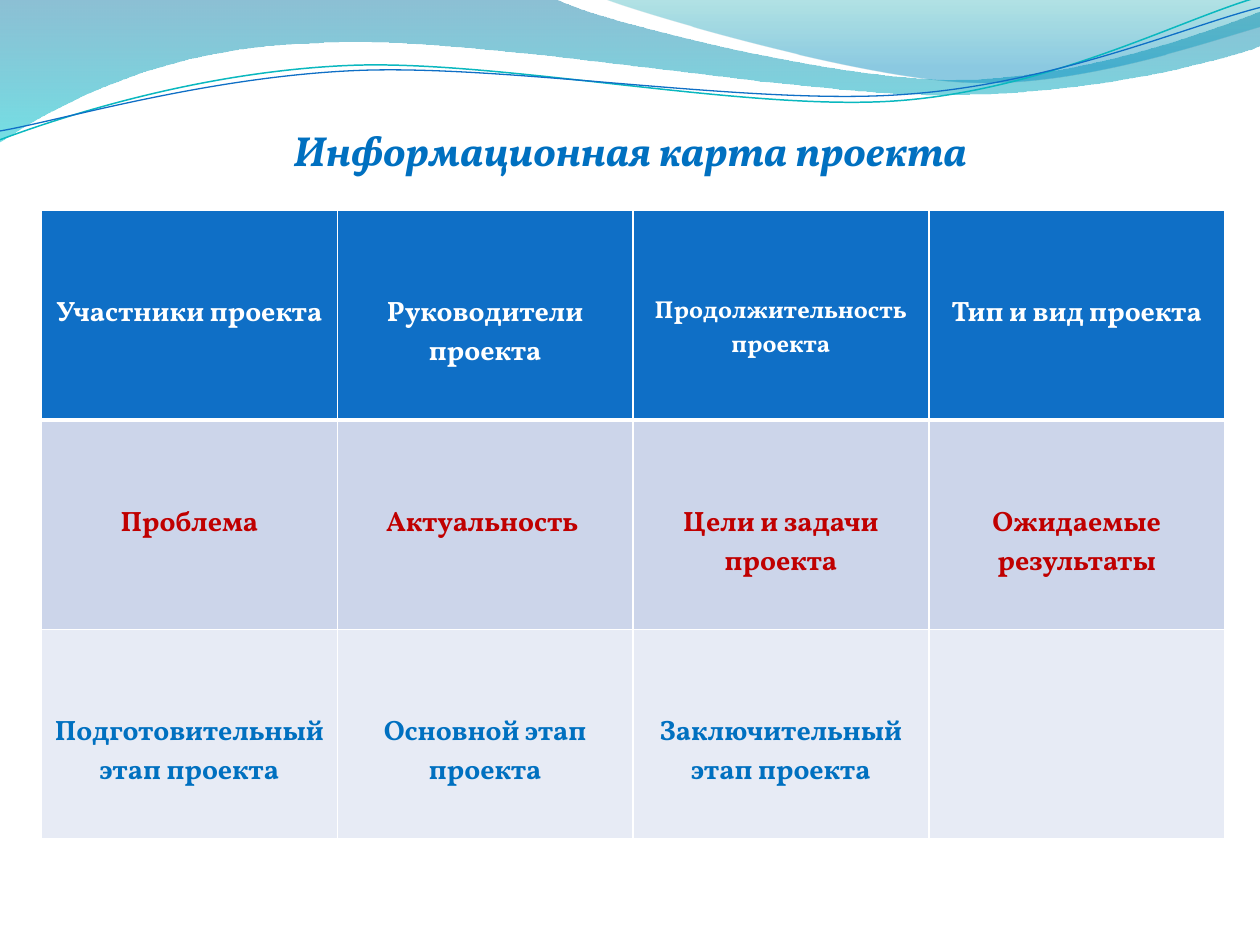
import math

import lxml.etree
import pptx
import pptx.dml.color
import pptx.enum.text
import pptx.oxml.ns
import pptx.util

Inches = pptx.util.Inches
Pt = pptx.util.Pt
qn = pptx.oxml.ns.qn
FONT = "Vollkorn"
HUES = {
    "white": "FFFFFF", "blue": "0070C0", "red": "C00000",
    "head": "0F6FC6", "odd": "CCD5EA", "even": "E7EBF5",
    "deep": "0074A1", "aqua": "00C6CF", "teal": "00A1A9",
    "sky": "008BBF", "cyan": "0AB8BF",
}
WAVES = [
    ([(0, 0), (4.4, -0.01), (4.76, 0.17, 6.64, 0.63, 7.58, 0.63),
      (8.53, 0.63, 9.58, 0.26, 10, 0.09), (10.01, 0.36),
      (9.83, 0.44, 8.7, 0.76, 7.46, 0.75), (6.22, 0.75, 3.82, 0.28, 2.57, 0.34),
      (1.29, 0.36, 0.46, 0.83, -0.01, 1.13), (0, 0)],
     [(0, "deep", 45), (1, "aqua", 55)]),
    ([(4.79, -0.01), (5.09, 0.11, 6.82, 0.62, 7.69, 0.65),
      (8.56, 0.69, 9.61, 0.32, 10, 0.21), (10, 0), (4.79, -0.01)],
     [(0, "teal", 30), (0.8, "sky", 45)]),
]
TILT = 2.7
LINES = [
    ([(0, 1.11), (0.48, 0.93, 1.58, 0.57, 2.77, 0.52),
      (3.95, 0.47, 5.93, 0.89, 7.13, 0.8), (8.33, 0.71, 9.38, 0.15, 9.98, -0.02)],
     "cyan", 0.85),
    ([(0, 1.04), (0.47, 0.96, 1.64, 0.61, 2.83, 0.56),
      (4.03, 0.51, 5.97, 0.84, 7.17, 0.75), (8.36, 0.67, 9.41, 0.21, 10, 0.06)],
     "head", 0.75),
]
ROWS = [
    ("head", "white", ["Участники проекта", "Руководители проекта",
                       "Продолжительность проекта", "Тип и вид проекта"]),
    ("odd", "red", ["Проблема", "Актуальность ",
                    "Цели и задачи проекта", "Ожидаемые результаты"]),
    ("even", "blue", ["Подготовительный этап проекта", "Основной этап проекта",
                      "Заключительный этап проекта", ""]),
]


def get_hue(name):
    """Return the named colour."""
    return pptx.dml.color.RGBColor.from_string(HUES[name])


def place_dots(box, path, tilt):
    """Return each part of a path as slide points, turned about the box centre."""
    mid_x, mid_y = box[2] / 2, box[3] / 2
    cos, sin = math.cos(math.radians(tilt)), math.sin(math.radians(tilt))
    parts = []
    for part in path:
        pairs = [(x - mid_x, y - mid_y) for x, y in zip(part[::2], part[1::2])]
        parts.append([(Inches(box[0] + mid_x + x * cos - y * sin),
                       Inches(box[1] + mid_y + x * sin + y * cos))
                      for x, y in pairs])
    return parts


def add_path(slide, box, path, close, tilt=0):
    """Add a freeform of lines and cubic curves."""
    parts = place_dots(box, path, tilt)
    form = slide.shapes.build_freeform(*parts[0][0], scale=1.0)
    form.add_line_segments([part[-1] for part in parts[1:]], close=close)
    shape = form.convert_to_shape()
    shape.shadow.inherit = False
    steps = list(shape._element.iter(qn("a:lnTo")))
    for step, part in zip(steps, parts[1:]):
        if len(part) == 3:
            step.tag = qn("a:cubicBezTo")
            step.clear()
            for x, y in part:
                lxml.etree.SubElement(step, qn("a:pt"), x=str(x - shape.left),
                                      y=str(y - shape.top))
    shape.rotation = -tilt
    return shape


def add_waves(slide, box):
    """Draw the tinted waves and the thin lines over them."""
    for path, stops in WAVES:
        wave = add_path(slide, box, path, True)
        wave.line.fill.background()
        wave.fill.gradient()
        wave.fill.gradient_angle = 270
        for stop, (place, hue, alpha) in zip(wave.fill.gradient_stops, stops):
            stop.position = place
            stop.color.rgb = get_hue(hue)
        tints = wave._element.spPr.iter(qn("a:srgbClr"))
        for tint, (place, hue, alpha) in zip(tints, stops):
            lxml.etree.SubElement(tint, qn("a:alpha"), val=str(alpha * 1000))
    for path, hue, width in LINES:
        curve = add_path(slide, box, path, False, TILT)
        curve.fill.background()
        curve.line.color.rgb = get_hue(hue)
        curve.line.width = Pt(width)


def set_text(para, text, size, hue):
    """Write a centred bold paragraph."""
    para.text = text
    para.alignment = pptx.enum.text.PP_ALIGN.CENTER
    para.font.name = FONT
    para.font.size = Pt(size)
    para.font.bold = True
    para.font.color.rgb = get_hue(hue)


def add_title(slide, box):
    """Add the heading at the foot of its box."""
    frame = slide.shapes.add_textbox(*map(Inches, box)).text_frame
    frame.word_wrap = True
    frame.vertical_anchor = pptx.enum.text.MSO_ANCHOR.BOTTOM
    frame.margin_left = frame.margin_right = frame.margin_bottom = 0
    set_text(frame.paragraphs[0], "Информационная карта проекта", 24, "blue")
    frame.paragraphs[0].font.italic = True


def add_edge(cell, side, width):
    """Give one side of a cell a white border."""
    props = cell._tc.get_or_add_tcPr()
    edge = lxml.etree.SubElement(props, qn("a:ln" + side), w=str(Pt(width)))
    fill = lxml.etree.SubElement(edge, qn("a:solidFill"))
    lxml.etree.SubElement(fill, qn("a:srgbClr"), val=HUES["white"])


def add_grid(slide, box):
    """Add the table of project topics."""
    grid = slide.shapes.add_table(len(ROWS), 4, *map(Inches, box)).table
    for r, (back, hue, texts) in enumerate(ROWS):
        for c, text in enumerate(texts):
            cell = grid.cell(r, c)
            for side in "LRTB":
                thick = (r, side) in ((0, "B"), (1, "T"))
                add_edge(cell, side, 3 if thick else 1)
            cell.fill.solid()
            cell.fill.fore_color.rgb = get_hue(back)
            if text:
                cell.margin_top = Inches(0.67)
                size = 14 if (r, c) == (0, 2) else 16
                set_text(cell.text_frame.paragraphs[0], text, size, hue)


def main():
    """Build and save the slide."""
    deck = pptx.Presentation()
    deck.slide_width, deck.slide_height = Inches(10), Inches(7.5)
    slide = deck.slides.add_slide(deck.slide_layouts[6])
    add_waves(slide, (0, 0, 10, 1.14))
    add_title(slide, (0.5, 0.77, 9, 0.62))
    add_grid(slide, (0.33, 1.67, 9.39, 4.99))
    deck.save("out.pptx")


if __name__ == "__main__":
    main()
